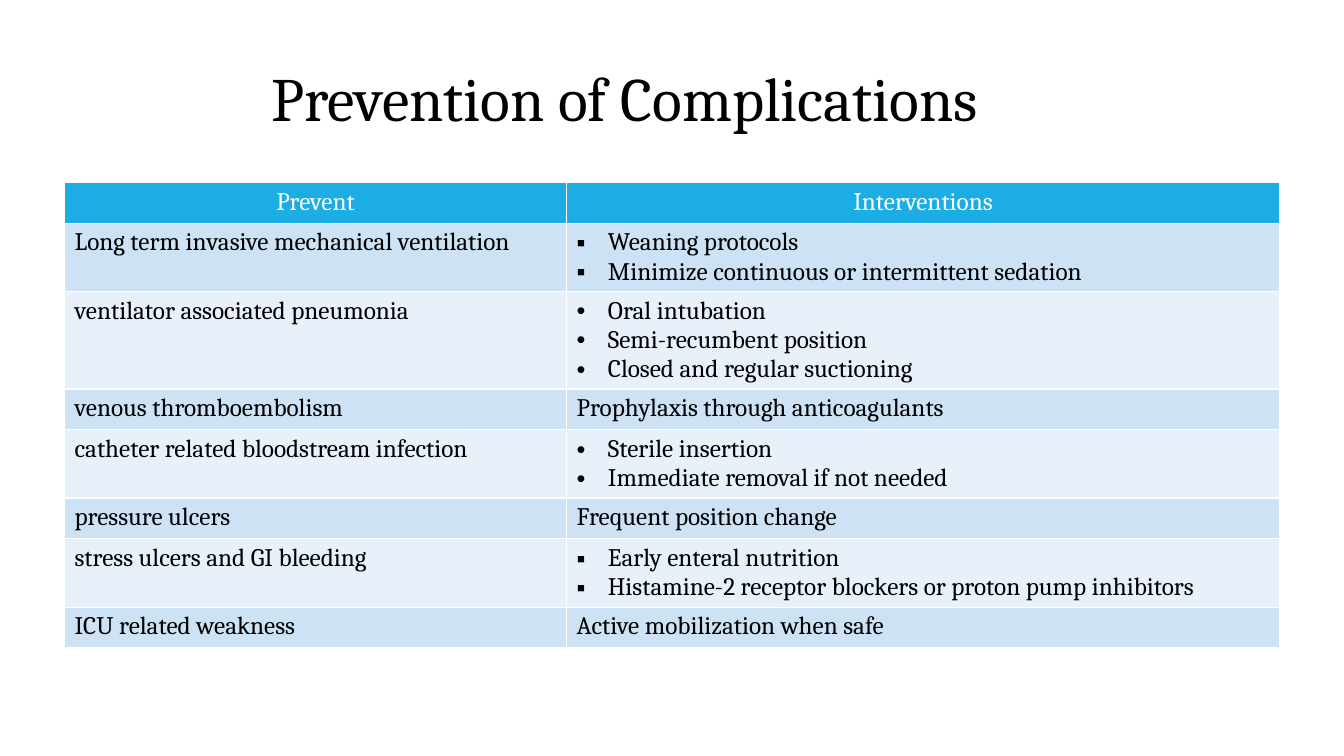
from dataclasses import dataclass

from lxml.etree import SubElement
from pptx import Presentation
from pptx.dml.color import RGBColor
from pptx.enum.text import MSO_ANCHOR, PP_ALIGN as Align
from pptx.oxml.ns import qn
from pptx.slide import Slide
from pptx.table import Table, _Cell as Cell
from pptx.text.text import _Paragraph as Paragraph
from pptx.util import Inches, Pt


@dataclass(frozen=True)
class Theme:
    font: str = "Cambria"
    bullet_font: str = "Arial"
    title_size: int = 44
    table_size: int = 18
    text: RGBColor = RGBColor.from_string("000000")
    header_text: RGBColor = RGBColor.from_string("FFFFFF")
    header_fill: RGBColor = RGBColor.from_string("1CADE4")
    bands: tuple[RGBColor, RGBColor] = (
        RGBColor.from_string("CDE3F5"),
        RGBColor.from_string("E8F1FA"),
    )


@dataclass(frozen=True)
class Complication:
    name: str
    interventions: tuple[str, ...]
    bullet: str = ""


THEME = Theme()
SQUARE, DOT = "▪", "•"
HEADERS = ("Prevent", "Interventions")
COLUMN_WIDTHS = (4.98, 7.07)
ROW_HEIGHT = 0.405
BULLET_INDENT = 0.31

COMPLICATIONS = (
    Complication(
        "Long term invasive mechanical ventilation",
        ("Weaning protocols", "Minimize continuous or intermittent sedation"),
        SQUARE,
    ),
    Complication(
        "ventilator associated pneumonia",
        ("Oral intubation", "Semi-recumbent position", "Closed and regular suctioning"),
        DOT,
    ),
    Complication("venous thromboembolism", ("Prophylaxis through anticoagulants",)),
    Complication(
        "catheter related bloodstream infection",
        ("Sterile insertion", "Immediate removal if not needed"),
        DOT,
    ),
    Complication("pressure ulcers", ("Frequent position change",)),
    Complication(
        "stress ulcers and GI bleeding",
        (
            "Early enteral nutrition",
            "Histamine-2 receptor blockers or proton pump inhibitors",
        ),
        SQUARE,
    ),
    Complication("ICU related weakness", ("Active mobilization when safe",)),
)


def style_paragraph(para: Paragraph, size: int, color: RGBColor, align: Align) -> None:
    para.alignment = align
    para.font.name = THEME.font
    para.font.size = Pt(size)
    para.font.bold = False
    para.font.color.rgb = color


def add_bullet(para: Paragraph, bullet: str) -> None:
    properties = para._p.get_or_add_pPr()
    properties.set("marL", str(Inches(BULLET_INDENT)))
    properties.set("indent", str(-Inches(BULLET_INDENT)))
    SubElement(properties, qn("a:buFont"), typeface=THEME.bullet_font)
    SubElement(properties, qn("a:buChar"), char=bullet)


def fill_cell(
    cell: Cell,
    lines: tuple[str, ...],
    fill: RGBColor,
    color: RGBColor = THEME.text,
    align: Align = Align.LEFT,
    bullet: str = "",
) -> None:
    cell.fill.solid()
    cell.fill.fore_color.rgb = fill
    cell.text = "\n".join(lines)
    for para in cell.text_frame.paragraphs:
        if bullet:
            add_bullet(para, bullet)
        style_paragraph(para, THEME.table_size, color, align)


def add_title(page: Slide, text: str) -> None:
    title = page.shapes.title
    title.left, title.top = Inches(2.05), Inches(0.24)
    title.width, title.height = Inches(8.3), Inches(1.45)
    title.text_frame.text = text
    title.text_frame.vertical_anchor = MSO_ANCHOR.MIDDLE
    style_paragraph(
        title.text_frame.paragraphs[0], THEME.title_size, THEME.text, Align.CENTER
    )


def add_complication_table(page: Slide) -> Table:
    row_count = len(COMPLICATIONS) + 1
    table = page.shapes.add_table(
        row_count,
        len(HEADERS),
        Inches(0.64),
        Inches(1.81),
        Inches(sum(COLUMN_WIDTHS)),
        Inches(ROW_HEIGHT * row_count),
    ).table
    for column, width in zip(table.columns, COLUMN_WIDTHS):
        column.width = Inches(width)

    for index, header in enumerate(HEADERS):
        fill_cell(
            table.cell(0, index),
            (header,),
            THEME.header_fill,
            THEME.header_text,
            Align.CENTER,
        )
    for index, item in enumerate(COMPLICATIONS):
        band = THEME.bands[index % 2]
        fill_cell(table.cell(index + 1, 0), (item.name,), band)
        fill_cell(
            table.cell(index + 1, 1), item.interventions, band, bullet=item.bullet
        )
    return table


def main() -> None:
    deck = Presentation()
    deck.slide_width, deck.slide_height = Inches(13.33), Inches(7.5)
    page = deck.slides.add_slide(deck.slide_layouts.get_by_name("Title Only"))
    add_title(page, "Prevention of Complications")
    add_complication_table(page)
    deck.save("out.pptx")


if __name__ == "__main__":
    main()
